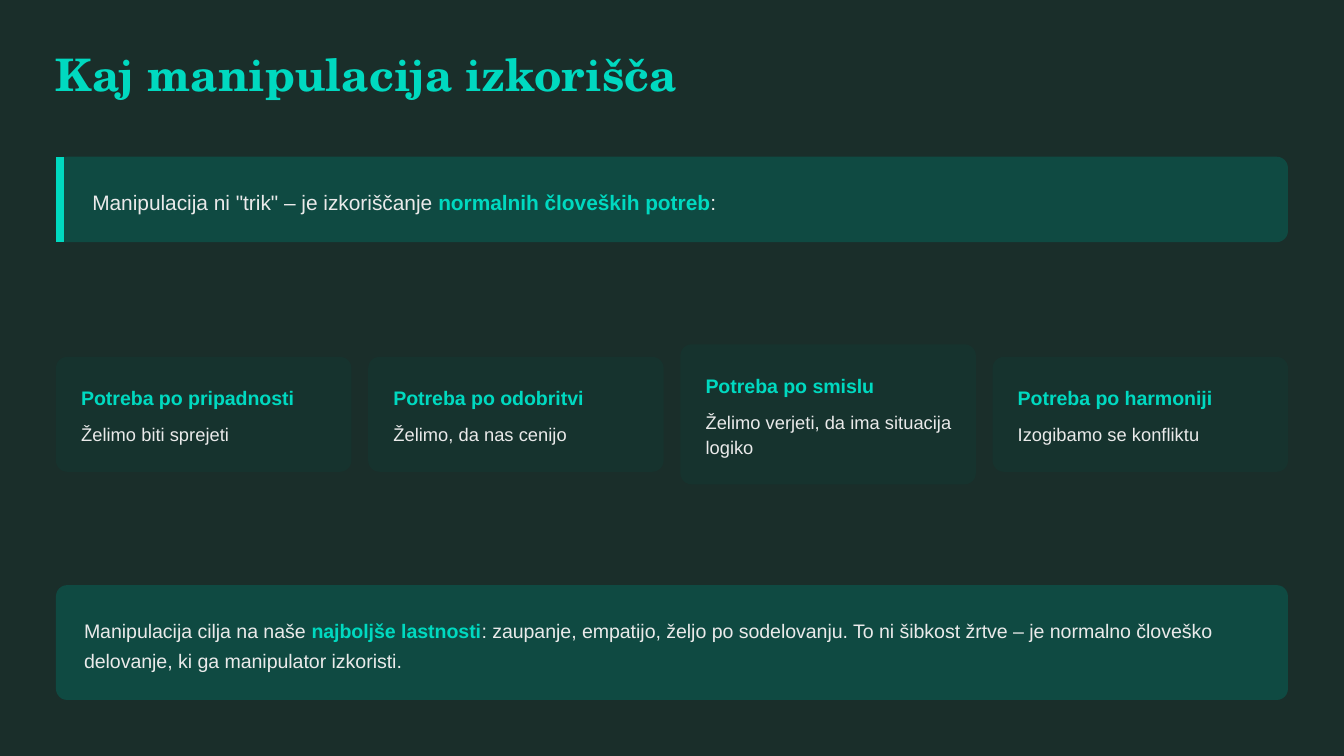
"""Build the slide on the human needs that manipulation exploits."""
from lxml import etree
from pptx import Presentation
from pptx.dml.color import RGBColor as RGB
from pptx.enum.shapes import MSO_CONNECTOR as CONN, MSO_SHAPE as SHAPE
from pptx.enum.text import MSO_ANCHOR as ANCHOR, MSO_AUTO_SIZE as AUTO, PP_ALIGN as ALIGN
from pptx.oxml.ns import qn
from pptx.util import Pt

PX = 9525
TEAL, LIGHT, PANEL, CARD = "00D9C0", "EAEAEA", "0F4A42", "16332E"

prs = Presentation()
prs.slide_width, prs.slide_height = 960 * PX, 540 * PX
s = prs.slides.add_slide(prs.slide_layouts[5])
s.background.fill.solid()
s.background.fill.fore_color.rgb = RGB.from_string("1A2E2A")


def add_panel(x, y, w, h, color):
    sp = s.shapes.add_shape(SHAPE.ROUNDED_RECTANGLE, x * PX, y * PX, w * PX, h * PX)
    sp.adjustments[0] = 8 / h
    sp.fill.solid()
    sp.fill.fore_color.rgb = RGB.from_string(color)
    sp.line.fill.background()
    sp.shadow.inherit = False


def add_text(text, x, y, w, h, size, spacing, font="Arial", after=0, strong=(), box=None):
    box = box or s.shapes.add_textbox(0, 0, 0, 0)
    box.left, box.top, box.width, box.height = x * PX, y * PX, w * PX, h * PX
    tf = box.text_frame
    tf.word_wrap = True
    tf.auto_size = AUTO.NONE
    tf.vertical_anchor = ANCHOR.TOP
    tf.margin_left = tf.margin_top = tf.margin_right = tf.margin_bottom = 0
    p = tf.paragraphs[0]
    p.alignment = ALIGN.LEFT
    p.line_spacing = Pt(spacing)
    p.space_before = Pt(0)
    p.space_after = Pt(after)
    for i, part in enumerate([text] if isinstance(text, str) else text):
        r = p.add_run()
        r.text = part
        r.font.name = font
        r.font.size = Pt(size)
        r.font.bold = i in strong
        r.font.color.rgb = RGB.from_string(TEAL if i in strong else LIGHT)


add_text("Kaj manipulacija izkorišča", 40, 40, 450, 32, 24, 24,
         font="TeX Gyre Schola", after=18, strong=(0,), box=s.shapes.title)

add_panel(40, 112, 880, 61, PANEL)
bar = s.shapes.add_connector(CONN.STRAIGHT, 43 * PX, 112 * PX, 43 * PX, 173 * PX)
bar.line.color.rgb = RGB.from_string(TEAL)
bar.line.width = Pt(4.5)
etree.SubElement(bar._element.spPr, qn("a:effectLst"))
add_text(['Manipulacija ni "trik" – je izkoriščanje ', "normalnih človeških potreb", ":"],
         66, 132, 851, 21, 11.2, 15.8, strong=(1,))

needs = [
    ("Potreba po pripadnosti", "Želimo biti sprejeti", 1),
    ("Potreba po odobritvi", "Želimo, da nas cenijo", 1),
    ("Potreba po smislu", "Želimo verjeti, da ima situacija logiko", 2),
    ("Potreba po harmoniji", "Izogibamo se konfliktu", 1),
]
for i, (need, detail, lines) in enumerate(needs):
    x, h = 40 + 223 * i, 64 + 18 * lines
    y = 296 - h // 2
    add_panel(x, y, 211, h, CARD)
    add_text(need, x + 18, y + 18, 179, 19, 10.5, 14.7, after=6, strong=(0,))
    add_text(detail, x + 18, y + 45, 179, 18 * lines, 9.8, 13.7)

add_panel(40, 418, 880, 82, PANEL)
add_text(["Manipulacija cilja na naše ", "najboljše lastnosti",
          ": zaupanje, empatijo, željo po sodelovanju. To ni šibkost žrtve – "
          "je normalno človeško delovanje, ki ga manipulator izkoristi."],
         60, 438, 857, 42, 10.5, 15.8, strong=(1,))

prs.save("out.pptx")
